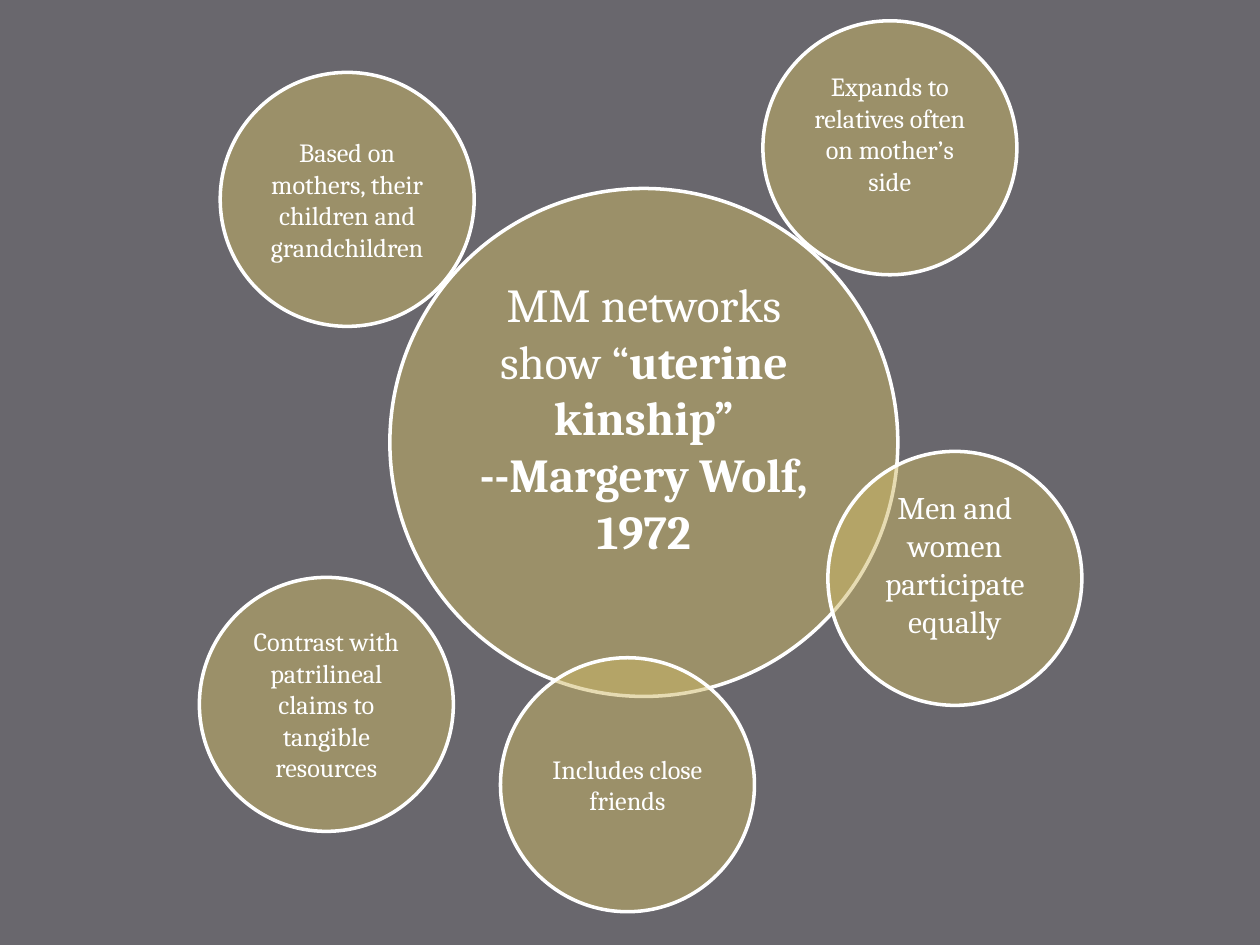
from pptx import Presentation
from pptx.dml.color import RGBColor
from pptx.enum.shapes import MSO_SHAPE as Shape
from pptx.enum.text import MSO_ANCHOR as Anchor, PP_ALIGN as Align
from pptx.oxml.ns import qn
from pptx.util import Cm, Pt
from lxml.etree import SubElement


def paint(color_format, hex_string):
    color_format.rgb = RGBColor.from_string(hex_string)


deck = Presentation()
deck.slide_width, deck.slide_height = Cm(25.4), Cm(19.05)
slide = deck.slides.add_slide(deck.slide_layouts[6])
slide.background.fill.solid()
paint(slide.background.fill.fore_color, "69676D")

LARGE, SMALL = 10.24, 5.12
circles = [
    (7.86, 3.8, LARGE, 27, 0.1, 1.03, [
        [("MM networks show “", False), ("uterine kinship”", True)],
        [("--Margery Wolf, 1972", True)],
    ]),
    (16.69, 9.1, SMALL, 18, 0.08, 0.58, [[("Men and women participate equally", False)]]),
    (15.38, 0.42, SMALL, 15, 0.05, 0.58, [[("Expands to relatives often on mother’s side", False)]]),
    (4.44, 1.46, SMALL, 15, 0.05, 0, [[("Based on mothers, their children and grandchildren", False)]]),
    (10.09, 13.26, SMALL, 15, 0.05, 0, [[("Includes close friends", False)]]),
    (4.02, 11.64, SMALL, 15, 0.05, 0, [[("Contrast with patrilineal claims to tangible resources", False)]]),
]

for left, top, diameter, size, margin, lift, paragraphs in circles:
    circle = slide.shapes.add_shape(Shape.OVAL, Cm(left), Cm(top), Cm(diameter), Cm(diameter))
    circle.shadow.inherit = False
    circle.fill.solid()
    paint(circle.fill.fore_color, "CEB966")
    color = circle.fill._xPr.find(qn("a:solidFill"))[0]
    SubElement(color, qn("a:alpha")).set("val", "50000")
    paint(circle.line.color, "FFFFFF")
    circle.line.width = Pt(2)

    frame = circle.text_frame
    frame_format = {
        "word_wrap": True,
        "vertical_anchor": Anchor.MIDDLE,
        "margin_left": Cm(margin),
        "margin_top": Cm(margin),
        "margin_right": Cm(margin),
        "margin_bottom": Cm(margin + lift),
    }
    for name, value in frame_format.items():
        setattr(frame, name, value)

    for index, spans in enumerate(paragraphs):
        para = frame.add_paragraph() if index else frame.paragraphs[0]
        para.alignment = Align.CENTER
        for text, bold in spans:
            span = para.add_run()
            span.text = text
            for name, value in {"name": "Cambria", "size": Pt(size), "bold": bold}.items():
                setattr(span.font, name, value)
            paint(span.font.color, "FFFFFF")

deck.save("out.pptx")
